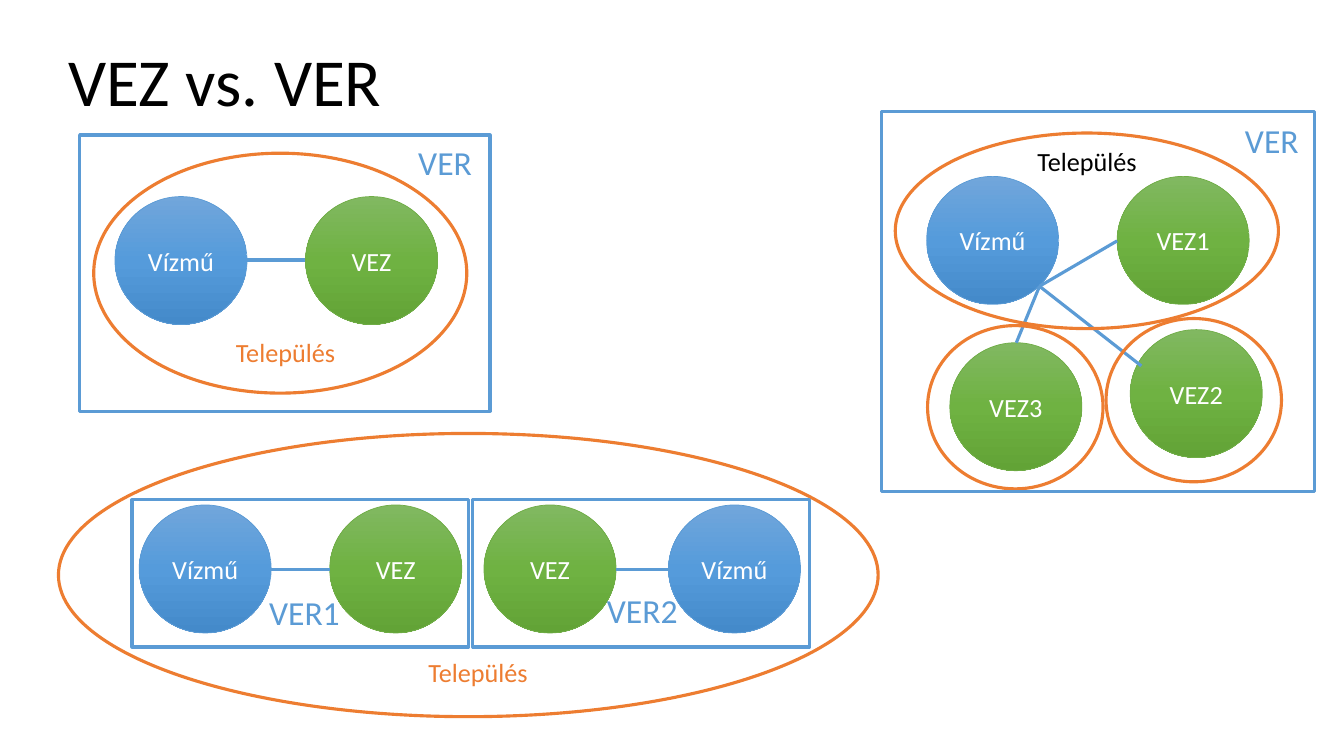
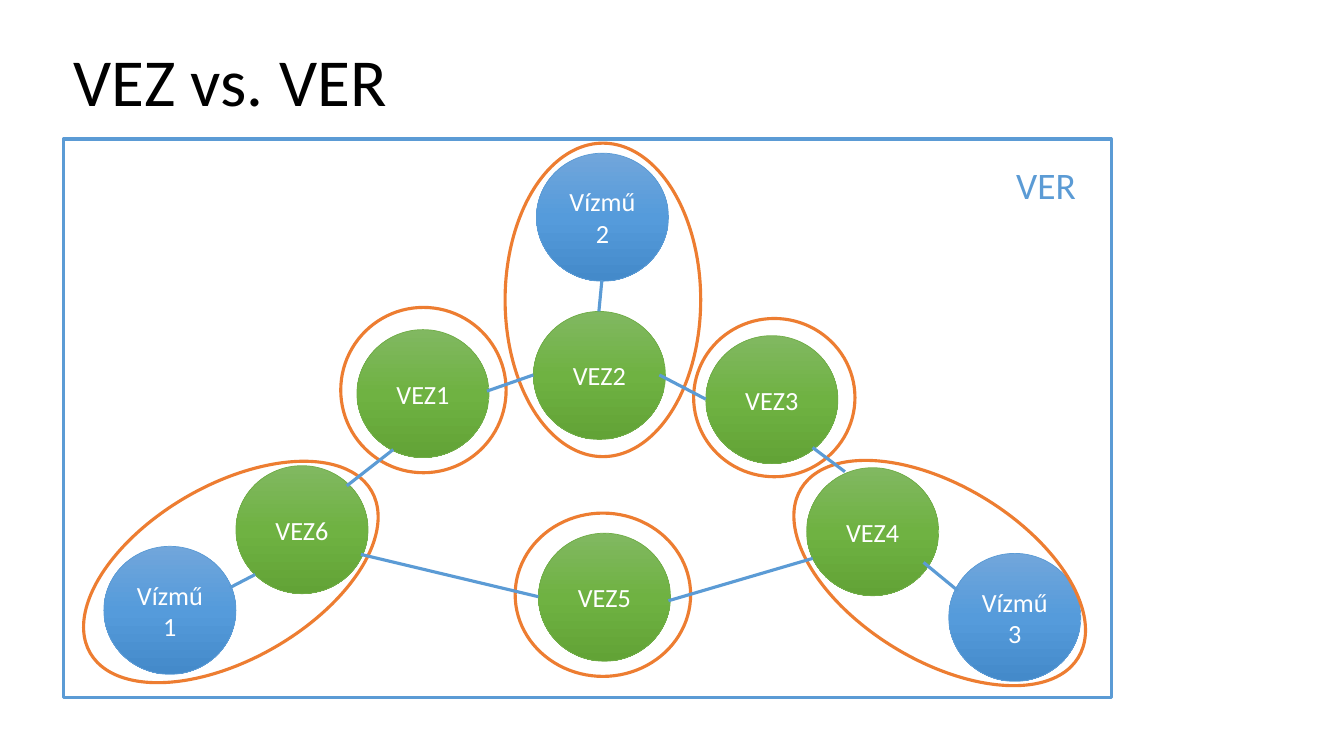
import copy

import pptx
import pptx.dml.color
import pptx.enum.shapes
import pptx.enum.text
import pptx.oxml.ns
import pptx.util

Inches = pptx.util.Inches
SHAPE = pptx.enum.shapes.MSO_SHAPE
ALIGN = pptx.enum.text.PP_ALIGN
ANCHOR = pptx.enum.text.MSO_ANCHOR
FIT = pptx.enum.text.MSO_AUTO_SIZE
qn = pptx.oxml.ns.qn

FONT = "Calibri"
BLACK, WHITE = "000000", "FFFFFF"
BLUE, ORANGE, GREEN = "5B9BD5", "ED7D31", "70AD47"
SHADES = {
    BLUE: ["71A6DB", "559BDB", "448ACA"],
    GREEN: ["81B861", "6FB242", "62A336"],
}
NODE_W, NODE_H = 1.31, 1.27
RING_W, RING_H = 1.74, 1.62
TEXT, NAME = 18.7, 24


def color(code):
    return pptx.dml.color.RGBColor.from_string(code)


def write(para, text, size, code):
    run = para.add_run()
    run.text = text
    run.font.name = FONT
    run.font.size = pptx.util.Pt(size)
    run.font.color.rgb = color(code)


def outline(shape, code, width):
    shape.line.color.rgb = color(code)
    shape.line.width = pptx.util.Pt(width)


def shade(shape, codes):
    """Fill with an even gradient that runs from top to bottom."""
    fill = shape.fill
    fill.gradient()
    fill.gradient_angle = 270
    stops = next(shape._element.iter(qn("a:gsLst")))
    stops.insert(1, copy.deepcopy(stops[0]))
    for i, (stop, code) in enumerate(zip(fill.gradient_stops, codes)):
        stop.position = i / (len(codes) - 1)
        stop.color.rgb = color(code)


def place(shapes, kind, x, y, w, h):
    shape = shapes.add_shape(kind, Inches(x), Inches(y), Inches(w), Inches(h))
    shape.shadow.inherit = False
    return shape


def node(shapes, x, y, text, code):
    disc = place(shapes, SHAPE.OVAL, x, y, NODE_W, NODE_H)
    shade(disc, SHADES[code])
    outline(disc, code, 0.5)
    frame = disc.text_frame
    frame.word_wrap = True
    frame.vertical_anchor = ANCHOR.MIDDLE
    for i, line in enumerate(text.split("\n")):
        para = frame.add_paragraph() if i else frame.paragraphs[0]
        para.alignment = ALIGN.CENTER
        write(para, line, TEXT, WHITE)


def plant(shapes, x, y, text="Vízmű"):
    node(shapes, x, y, text, BLUE)


def zone(shapes, x, y, text="VEZ"):
    node(shapes, x, y, text, GREEN)


def ring(shapes, x, y, w=RING_W, h=RING_H, turn=0):
    oval = place(shapes, SHAPE.OVAL, x, y, w, h)
    oval.fill.background()
    outline(oval, ORANGE, 2.25)
    oval.rotation = turn


def border(shapes, x, y, w, h):
    rect = place(shapes, SHAPE.RECTANGLE, x, y, w, h)
    rect.fill.background()
    outline(rect, BLUE, 2.25)


def link(shapes, x1, y1, x2, y2):
    line = shapes.add_connector(
        pptx.enum.shapes.MSO_CONNECTOR.STRAIGHT,
        Inches(x1), Inches(y1), Inches(x2), Inches(y2))
    outline(line, BLUE, 2.25)
    props = line._element.spPr
    props.append(props.makeelement(qn("a:effectLst"), {}))


def label(shapes, x, y, w, h, text, size, code):
    box = shapes.add_textbox(Inches(x), Inches(y), Inches(w), Inches(h))
    box.text_frame.word_wrap = False
    box.text_frame.auto_size = FIT.SHAPE_TO_FIT_TEXT
    write(box.text_frame.paragraphs[0], text, size, code)


def town(shapes, x, y, code=ORANGE):
    label(shapes, x, y, 1.19, 0.42, "Település", TEXT, code)


def start(deck, left):
    """Add a blank slide with its title and return its shapes."""
    shapes = deck.slides.add_slide(deck.slide_layouts[6]).shapes
    box = shapes.add_textbox(
        Inches(left), Inches(0.4), Inches(11.8), Inches(0.88))
    box.text_frame.word_wrap = True
    box.text_frame.vertical_anchor = ANCHOR.MIDDLE
    para = box.text_frame.paragraphs[0]
    para.line_spacing = 0.9
    write(para, "VEZ vs. VER", 48, BLACK)
    return shapes


def single(shapes, x, y):
    """One town with one supply system."""
    plant(shapes, x + 0.35, y + 0.61)
    zone(shapes, x + 2.24, y + 0.61)
    link(shapes, x + 1.66, y + 1.24, x + 2.24, y + 1.24)
    ring(shapes, x + 0.14, y + 0.18, 3.7, 2.38)
    town(shapes, x + 1.45, y + 1.95)
    border(shapes, x, y, 4.07, 2.74)
    label(shapes, x + 3.26, y + 0.02, 0.74, 0.5, "VER", NAME, BLUE)


def double(shapes, x, y):
    """One town split between two supply systems."""
    ring(shapes, x, y, 8.13, 2.81)
    town(shapes, x + 3.57, y + 2.16)
    halves = [
        ("VER1", plant, 0.8, zone, 2.69, 1.99, 1.52),
        ("VER2", zone, 4.22, plant, 6.05, 5.34, 1.5),
    ]
    for i, (name, first, x1, last, x2, tx, ty) in enumerate(halves):
        first(shapes, x + x1, y + 0.71)
        last(shapes, x + x2, y + 0.71)
        link(shapes, x + x1 + NODE_W, y + 1.35, x + x2, y + 1.35)
        border(shapes, x + 0.73 + 3.38 * i, y + 0.66, 3.34, 1.46)
        label(shapes, x + tx, y + ty, 0.91, 0.5, name, NAME, BLUE)


def region(shapes, x, y):
    """Three towns fed by one plant, kept as a group."""
    group = shapes.add_group_shape().shapes
    plant(group, x + 0.45, y + 0.64)
    for i, (dx, dy) in enumerate([(2.34, 0.64), (2.47, 2.16), (0.68, 2.29)]):
        zone(group, x + dx, y + dy, f"VEZ{i + 1}")
    for dx, dy in [(2.34, 1.28), (2.58, 2.52), (1.34, 2.29)]:
        link(group, x + 1.57, y + 1.73, x + dx, y + dy)
    ring(group, x + 0.14, y + 0.21, 3.8, 1.94)
    ring(group, x + 2.23, y + 2.05)
    ring(group, x + 0.46, y + 2.12)
    town(group, x + 1.45, y + 0.28, BLACK)
    border(group, x, y, 4.3, 3.77)
    label(group, x + 3.51, y + 0.03, 0.74, 0.5, "VER", NAME, BLUE)


def network(shapes, x, y):
    """Six zones and three plants joined in one loop."""
    zones = [(2.91, 1.89), (4.66, 1.71), (6.37, 1.95),
             (7.37, 3.26), (4.71, 3.91), (1.71, 3.24)]
    plants = [(0.4, 4.04, "Vízmű1"), (4.69, 0.14, "Vízmű 2"),
              (8.78, 4.11, "Vízmű\n3")]
    rings = [
        (2.75, 1.67, 1.64, 1.64), (4.38, 0.04, 1.94, 3.11),
        (6.25, 1.78, 1.6, 1.57), (4.48, 3.71, RING_W, RING_H),
        (0.05, 3.43, 3.22, 1.73, 330.1), (7.08, 3.44, 3.22, 1.73, 31.4),
    ]
    links = [
        (5.34, 1.4, 5.31, 1.71), (1.65, 4.45, 1.9, 4.32),
        (8.87, 4.48, 8.53, 4.2), (4.71, 4.54, 2.95, 4.12),
        (7.43, 4.16, 6, 4.58), (3.27, 3.08, 2.81, 3.44),
        (4.66, 2.34, 4.2, 2.5), (6.37, 2.58, 5.91, 2.34),
        (7.43, 3.06, 7.75, 3.3),
    ]
    border(shapes, x, y, 10.39, 5.54)
    label(shapes, x + 9.35, y + 0.18, 0.8, 0.55, "VER", 26.7, BLUE)
    for i, (dx, dy) in enumerate(zones):
        zone(shapes, x + dx, y + dy, f"VEZ{i + 1}")
    for dx, dy, text in plants:
        plant(shapes, x + dx, y + dy, text)
    for dx, dy, *size in rings:
        ring(shapes, x + dx, y + dy, *size)
    for x1, y1, x2, y2 in links:
        link(shapes, x + x1, y + y1, x + x2, y + y2)


def main():
    deck = pptx.Presentation()
    deck.slide_width, deck.slide_height = Inches(13.33), Inches(7.5)

    shapes = start(deck, 0.58)
    single(shapes, 0.79, 1.34)
    region(shapes, 8.74, 1.11)
    double(shapes, 0.58, 4.3)

    network(start(deck, 0.63), 0.63, 1.38)
    deck.save("out.pptx")


if __name__ == "__main__":
    main()
